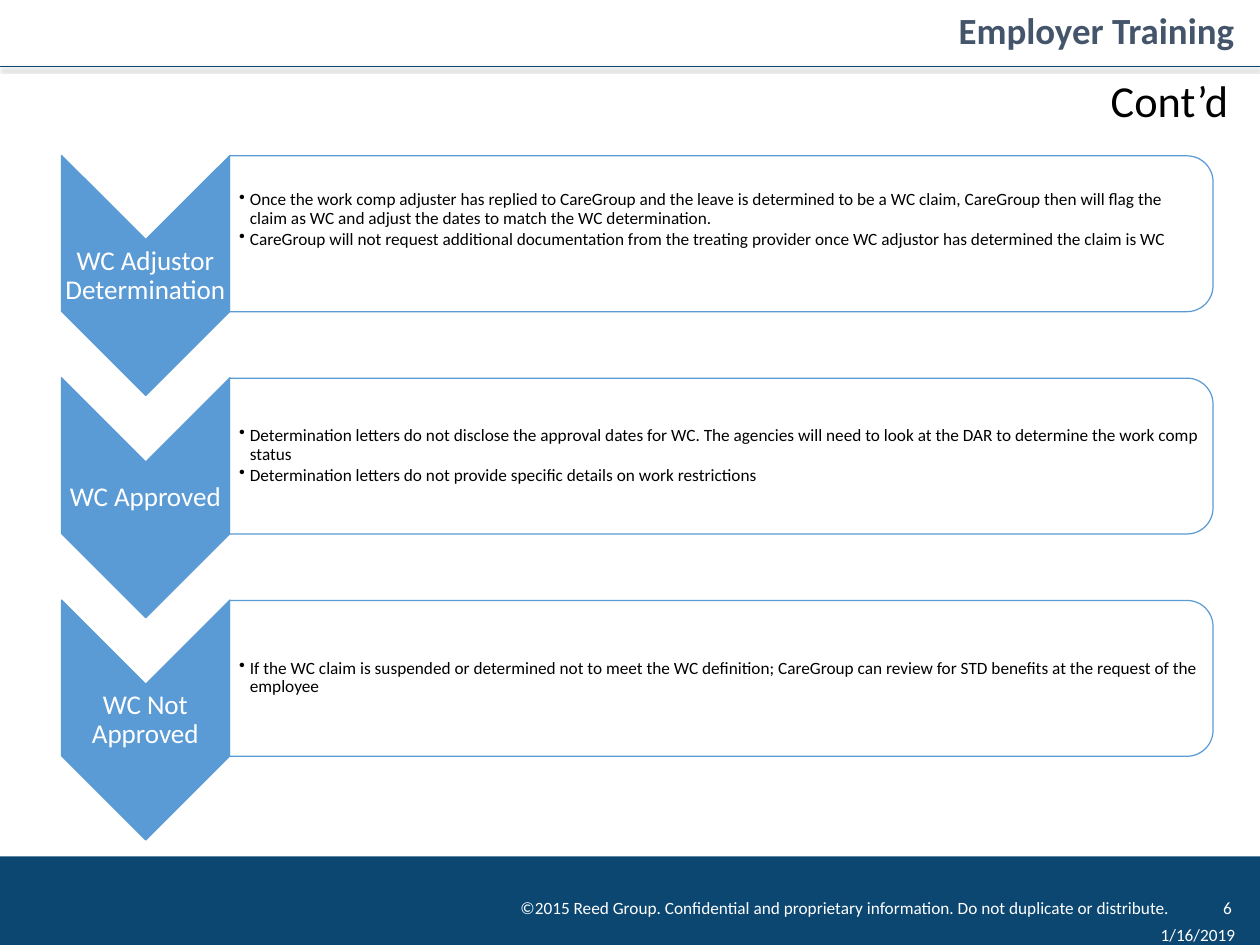
from lxml.etree import SubElement
from pptx import Presentation
from pptx.dml.color import RGBColor
from pptx.enum.shapes import MSO_CONNECTOR, MSO_SHAPE
from pptx.enum.text import MSO_ANCHOR, MSO_AUTO_SIZE, PP_ALIGN
from pptx.oxml.ns import qn
from pptx.util import Inches, Pt

COLORS = {"navy": "0C4772", "blue": "5B9BD5", "slate": "44546A",
          "white": "FFFFFF", "black": "000000", "gray": "808080"}
FONT = "Calibri"
SLIDE_WIDTH, SLIDE_HEIGHT = 14.22, 10.67
STEP_PITCH = 2.51

# Label, bottom inset of the panel text, bullet points
STEPS = [
    ("WC Adjustor Determination", 0.31, [
        "Once the work comp adjuster has replied to CareGroup and the leave is "
        "determined to be a WC claim, CareGroup then will flag the claim as WC "
        "and adjust the dates to match the WC determination.",
        "CareGroup will not request additional documentation from the treating "
        "provider once WC adjustor has determined the claim is WC"]),
    ("WC Approved", 0.01, [
        "Determination letters do not disclose the approval dates for WC. The "
        "agencies will need to look at the DAR to determine the work comp status",
        "Determination letters do not provide specific details on work restrictions"]),
    ("WC Not Approved", 0.01, [
        "If the WC claim is suspended or determined not to meet the WC definition; "
        "CareGroup can review for STD benefits at the request of the employee"]),
]


def rgb(color):
    return RGBColor.from_string(COLORS[color])


def apply(target, values):
    for name, value in values.items():
        setattr(target, name, value)


class SlideBuilder:
    def __init__(self, slide):
        self.slide = slide

    def shape(self, kind, box, fill, line=None, rotation=0, alpha=None):
        shape = self.slide.shapes.add_shape(kind, *map(Inches, box))
        shape.shadow.inherit = False
        shape.rotation = rotation
        shape.fill.solid()
        shape.fill.fore_color.rgb = rgb(fill)
        if alpha is not None:
            color = shape._element.spPr.find(qn("a:solidFill"))[0]
            SubElement(color, qn("a:alpha"), val=str(alpha * 1000))
        if line:
            shape.line.color.rgb = rgb(line)
            shape.line.width = Pt(1)
        else:
            shape.line.fill.background()

    def set_text(self, holder, paragraphs, size, color, align=PP_ALIGN.LEFT,
                 insets=(0.1, 0.05, 0.1, 0.05), anchor=MSO_ANCHOR.TOP,
                 bold=False, wrap=True, bullets=False, spacing=1.0):
        frame = holder.text_frame
        left, top, right, bottom = map(Inches, insets)
        apply(frame, {"margin_left": left, "margin_top": top,
                      "margin_right": right, "margin_bottom": bottom,
                      "word_wrap": wrap, "vertical_anchor": anchor,
                      "auto_size": MSO_AUTO_SIZE.NONE})
        frame.text = "\n".join(paragraphs)
        for paragraph in frame.paragraphs:
            if bullets:
                properties = paragraph._p.get_or_add_pPr()
                properties.set("marL", str(Inches(0.12)))
                properties.set("indent", str(-Inches(0.12)))
                SubElement(properties, qn("a:buChar"), char="•")
                paragraph.space_after = Pt(2)
            apply(paragraph, {"alignment": align, "line_spacing": spacing})
            apply(paragraph.font, {"name": FONT, "size": Pt(size), "bold": bold})
            paragraph.font.color.rgb = rgb(color)

    def title(self, text, box, **style):
        title = self.slide.shapes.title
        left, top, width, height = map(Inches, box)
        apply(title, {"left": left, "top": top, "width": width, "height": height})
        self.set_text(title, [text], **style)

    def text(self, paragraphs, box, **style):
        textbox = self.slide.shapes.add_textbox(*map(Inches, box))
        self.set_text(textbox, paragraphs, **style)

    def rule(self, y):
        rule = self.slide.shapes.add_connector(
            MSO_CONNECTOR.STRAIGHT, 0, Inches(y), Inches(SLIDE_WIDTH), Inches(y))
        rule.line.color.rgb = rgb("navy")
        rule.line.width = Pt(1.5)
        effects = SubElement(rule._element.spPr, qn("a:effectLst"))
        shadow = SubElement(effects, qn("a:outerShdw"), blurRad=str(Pt(3)),
                            dist=str(Pt(2)), dir="5400000", rotWithShape="0")
        color = SubElement(shadow, qn("a:srgbClr"), val=COLORS["gray"])
        SubElement(color, qn("a:alpha"), val="50000")

    def step(self, offset, label, bottom_inset, points):
        self.shape(MSO_SHAPE.CHEVRON, (0.29, 2.16 + offset, 2.71, 1.9),
                   "blue", "blue", rotation=90)
        self.text([label], (0.69, 2.71 + offset, 1.9, 0.81), size=22, color="white",
                  align=PP_ALIGN.CENTER, anchor=MSO_ANCHOR.MIDDLE,
                  insets=(0.02,) * 4, spacing=0.9)
        self.shape(MSO_SHAPE.ROUND_2_SAME_RECTANGLE, (7.26, -2.91 + offset, 1.76, 11.1),
                   "white", "blue", rotation=90, alpha=90)
        self.text(points, (2.59, 1.84 + offset, 11.01, 1.59), size=14, color="black",
                  anchor=MSO_ANCHOR.MIDDLE, insets=(0.11, 0.01, 0.01, bottom_inset),
                  bullets=True, spacing=0.9)


def main():
    deck = Presentation()
    deck.slide_width, deck.slide_height = Inches(SLIDE_WIDTH), Inches(SLIDE_HEIGHT)
    page = SlideBuilder(deck.slides.add_slide(deck.slide_layouts[5]))

    # Footer band
    page.shape(MSO_SHAPE.RECTANGLE, (0, 9.67, SLIDE_WIDTH, 1), "navy")
    footer = {"size": 14, "color": "white"}
    page.text(["©2015 Reed Group. Confidential and proprietary information. "
               "Do not duplicate or distribute."], (5.69, 10.08, 7.61, 0.34),
              align=PP_ALIGN.RIGHT, wrap=False, **footer)
    page.text(["6"], (13.31, 10.08, 0.69, 0.34), align=PP_ALIGN.RIGHT, **footer)
    page.text(["1/16/2019"], (13, 10.39, 1.05, 0.34), wrap=False, **footer)

    # Header and title
    page.rule(0.75)
    page.text(["Employer Training"], (1.86, 0.04, 12.17, 0.61), size=30,
              color="slate", bold=True, align=PP_ALIGN.RIGHT)
    page.title("Cont’d", (1.11, 0.83, 12.85, 0.67), size=36, color="black",
               align=PP_ALIGN.RIGHT, anchor=MSO_ANCHOR.MIDDLE, spacing=0.9)

    # Determination steps
    for index, (label, bottom_inset, points) in enumerate(STEPS):
        page.step(index * STEP_PITCH, label, bottom_inset, points)

    deck.save("out.pptx")


if __name__ == "__main__":
    main()
